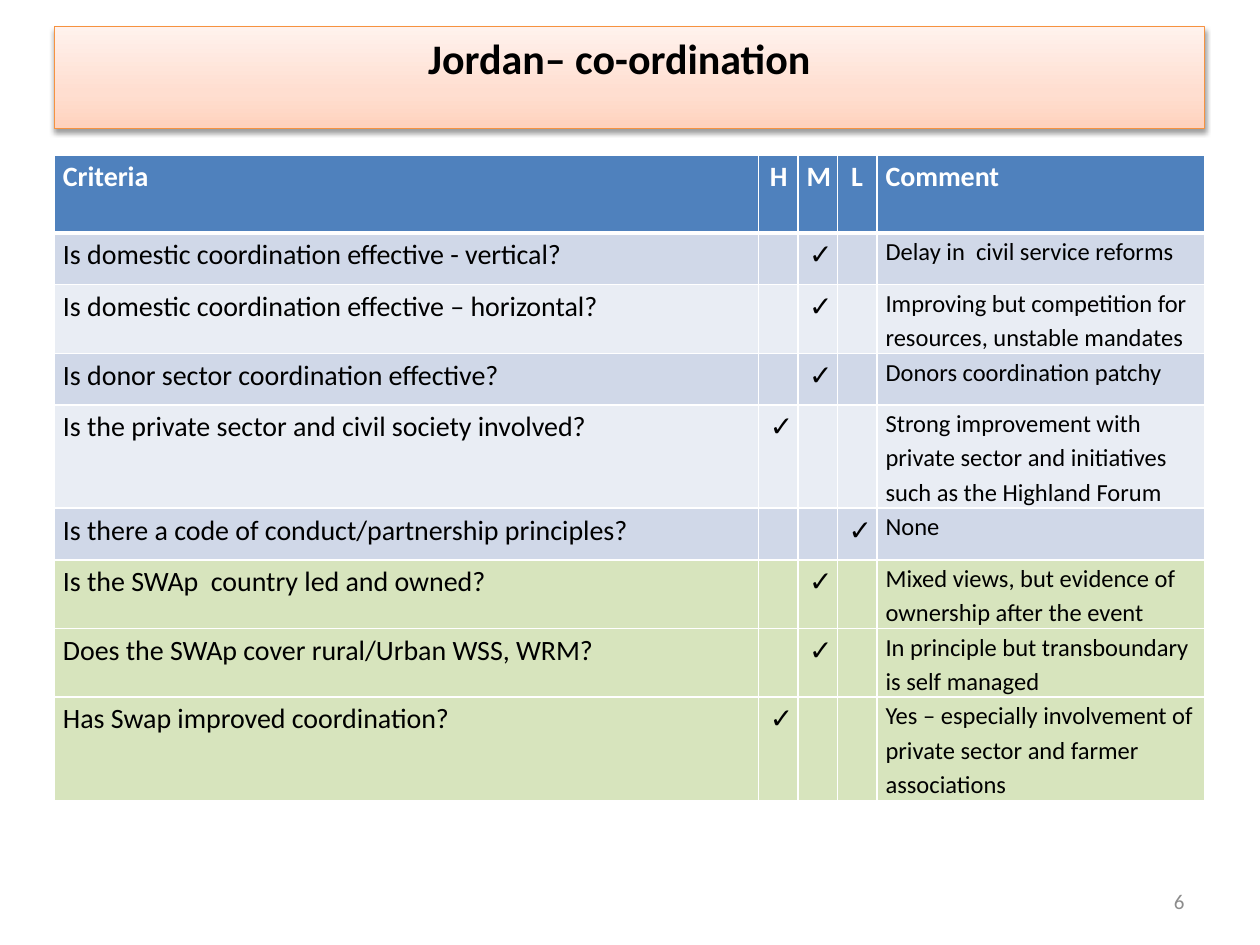
from lxml import etree
from pptx import Presentation
from pptx.dml.color import RGBColor
from pptx.enum.text import MSO_ANCHOR, MSO_AUTO_SIZE, PP_ALIGN
from pptx.oxml import parse_xml
from pptx.oxml.ns import nsdecls, qn
from pptx.util import Inches, Pt

LEFT, CENTER, RIGHT = PP_ALIGN.LEFT, PP_ALIGN.CENTER, PP_ALIGN.RIGHT
TOP, MIDDLE = MSO_ANCHOR.TOP, MSO_ANCHOR.MIDDLE
TITLE_ONLY = 5

COLORS = {
    "header": "4F81BD", "odd": "D0D8E8", "even": "E9EDF4", "swap": "D7E4BD",
    "white": "FFFFFF", "black": "000000", "number": "8C8C8C", "title_line": "F69240",
}
TITLE_GRADIENT = [(0, "FFD2BD"), (35, "FFDED0"), (100, "FFF2ED")]

TITLE = "Jordan– co-ordination"
PAGE = "6"
RATINGS = ["H", "M", "L"]
HEADER = ["Criteria", *RATINGS, "Comment"]
CRITERIA = [
    ("Is domestic coordination effective - vertical?", "M",
     "Delay in  civil service reforms", "odd", 1),
    ("Is domestic coordination effective – horizontal?", "M",
     "Improving but competition for resources, unstable mandates", "even", 2),
    ("Is donor sector coordination effective?", "M",
     "Donors coordination patchy", "odd", 1),
    ("Is the private sector and civil society involved?", "H",
     "Strong improvement with private sector and initiatives such as the Highland Forum",
     "even", 3),
    ("Is there a code of conduct/partnership principles?", "L", "None", "odd", 1),
    ("Is the SWAp  country led and owned?", "M",
     "Mixed views, but evidence of ownership after the event", "swap", 2),
    ("Does the SWAp cover rural/Urban WSS, WRM?", "M",
     "In principle but transboundary is self managed", "swap", 2),
    ("Has Swap improved coordination?", "H",
     "Yes – especially involvement of private sector and farmer associations", "swap", 3),
]

MARGIN, WIDTH = 0.43, 9.13
TITLE_TOP, TITLE_HEIGHT = 0.21, 0.81
TABLE_TOP, HEADER_HEIGHT = 1.23, 0.62
CRITERIA_WIDTH, COMMENT_WIDTH = 5.59, 2.6
RATING_WIDTH = (WIDTH - CRITERIA_WIDTH - COMMENT_WIDTH) / len(RATINGS)
COLUMN_WIDTHS = [CRITERIA_WIDTH, *[RATING_WIDTH] * len(RATINGS), COMMENT_WIDTH]
ROW_HEIGHTS = {1: 0.41, 2: 0.54, 3: 0.82}
INDENTS = [(0.38, -0.38), (0.02, 0), (0.02, 0), (0.02, 0), (0, 0)]


def write(frame, text, size, color, bold=False, align=LEFT):
    paragraph = frame.paragraphs[0]
    paragraph.alignment = align
    run = paragraph.add_run()
    run.text = text
    for name, value in {"size": Pt(size), "name": "Calibri", "bold": bold}.items():
        setattr(run.font, name, value)
    run.font.color.rgb = RGBColor.from_string(COLORS[color])
    return paragraph


def add_title(slide):
    title = slide.shapes.title
    title.left, title.top = Inches(MARGIN), Inches(TITLE_TOP)
    title.width, title.height = Inches(WIDTH), Inches(TITLE_HEIGHT)
    stops = "".join(
        f'<a:gs pos="{share * 1000}"><a:srgbClr val="{color}"/></a:gs>'
        for share, color in TITLE_GRADIENT)
    properties = title._element.spPr
    properties.append(parse_xml(
        f'<a:gradFill {nsdecls("a")} rotWithShape="1"><a:gsLst>{stops}</a:gsLst>'
        '<a:lin ang="16200000" scaled="0"/></a:gradFill>'))
    title.line.color.rgb = RGBColor.from_string(COLORS["title_line"])
    title.line.width = Pt(0.75)
    properties.append(parse_xml(
        f'<a:effectLst {nsdecls("a")}><a:outerShdw blurRad="{Pt(3.1)}" dist="{Pt(1.6)}" '
        'dir="5400000" rotWithShape="0"><a:srgbClr val="000000"><a:alpha val="38000"/>'
        '</a:srgbClr></a:outerShdw></a:effectLst>'))
    frame = title.text_frame
    frame_format = {
        "word_wrap": True, "auto_size": MSO_AUTO_SIZE.NONE, "vertical_anchor": TOP,
        "margin_left": Inches(0.1), "margin_right": Inches(0.26),
    }
    for name, value in frame_format.items():
        setattr(frame, name, value)
    write(frame, TITLE, 24, "black", True, CENTER)


def set_borders(cell, bottom):
    properties = cell._tc.get_or_add_tcPr()
    widths = {"a:lnL": 1, "a:lnR": 1, "a:lnT": 1, "a:lnB": bottom}
    for position, (side, width) in enumerate(widths.items()):
        line = etree.Element(qn(side), w=str(Pt(width)))
        fill = etree.SubElement(line, qn("a:solidFill"))
        etree.SubElement(fill, qn("a:srgbClr"), val=COLORS["white"])
        properties.insert(position, line)


def fill_row(row, texts, fill, header=False):
    for column, (cell, text) in enumerate(zip(row.cells, texts)):
        cell.fill.solid()
        cell.fill.fore_color.rgb = RGBColor.from_string(COLORS[fill])
        cell.margin_left = cell.margin_right = Inches(0.07)
        cell.margin_top = cell.margin_bottom = 0
        set_borders(cell, 3 if header else 1)
        if not text:
            continue
        is_comment = column == len(HEADER) - 1
        size = 14 if is_comment and not header else 16
        align = CENTER if header and text in ("M", "L") else LEFT
        paragraph = write(cell.text_frame, text, size,
                          "white" if header else "black", header, align)
        paragraph.line_spacing = 1.15
        if align == LEFT:
            left, first = INDENTS[column]
            paragraph_properties = paragraph._p.get_or_add_pPr()
            paragraph_properties.set("marL", str(Inches(left)))
            paragraph_properties.set("indent", str(Inches(first)))


def add_criteria(slide):
    heights = [HEADER_HEIGHT, *[ROW_HEIGHTS[lines] for *_, lines in CRITERIA]]
    table = slide.shapes.add_table(
        len(heights), len(HEADER), Inches(MARGIN), Inches(TABLE_TOP),
        Inches(WIDTH), Inches(sum(heights))).table
    for column, width in zip(table.columns, COLUMN_WIDTHS):
        column.width = Inches(width)
    for row, height in zip(table.rows, heights):
        row.height = Inches(height)
    fill_row(table.rows[0], HEADER, "header", True)
    for index, (question, rating, comment, fill, _) in enumerate(CRITERIA, 1):
        ticks = ["✓" if rating == level else "" for level in RATINGS]
        fill_row(table.rows[index], [question, *ticks, comment], fill)


def add_page_number(slide):
    number = slide.shapes.add_textbox(Inches(7.17), Inches(6.95), Inches(2.33), Inches(0.4))
    number.text_frame.word_wrap = True
    number.text_frame.vertical_anchor = MIDDLE
    write(number.text_frame, PAGE, 12, "number", align=RIGHT)


def main():
    deck = Presentation()
    deck.slide_width, deck.slide_height = Inches(10), Inches(7.5)
    slide = deck.slides.add_slide(deck.slide_layouts[TITLE_ONLY])
    add_title(slide)
    add_criteria(slide)
    add_page_number(slide)
    deck.save("out.pptx")


if __name__ == "__main__":
    main()
